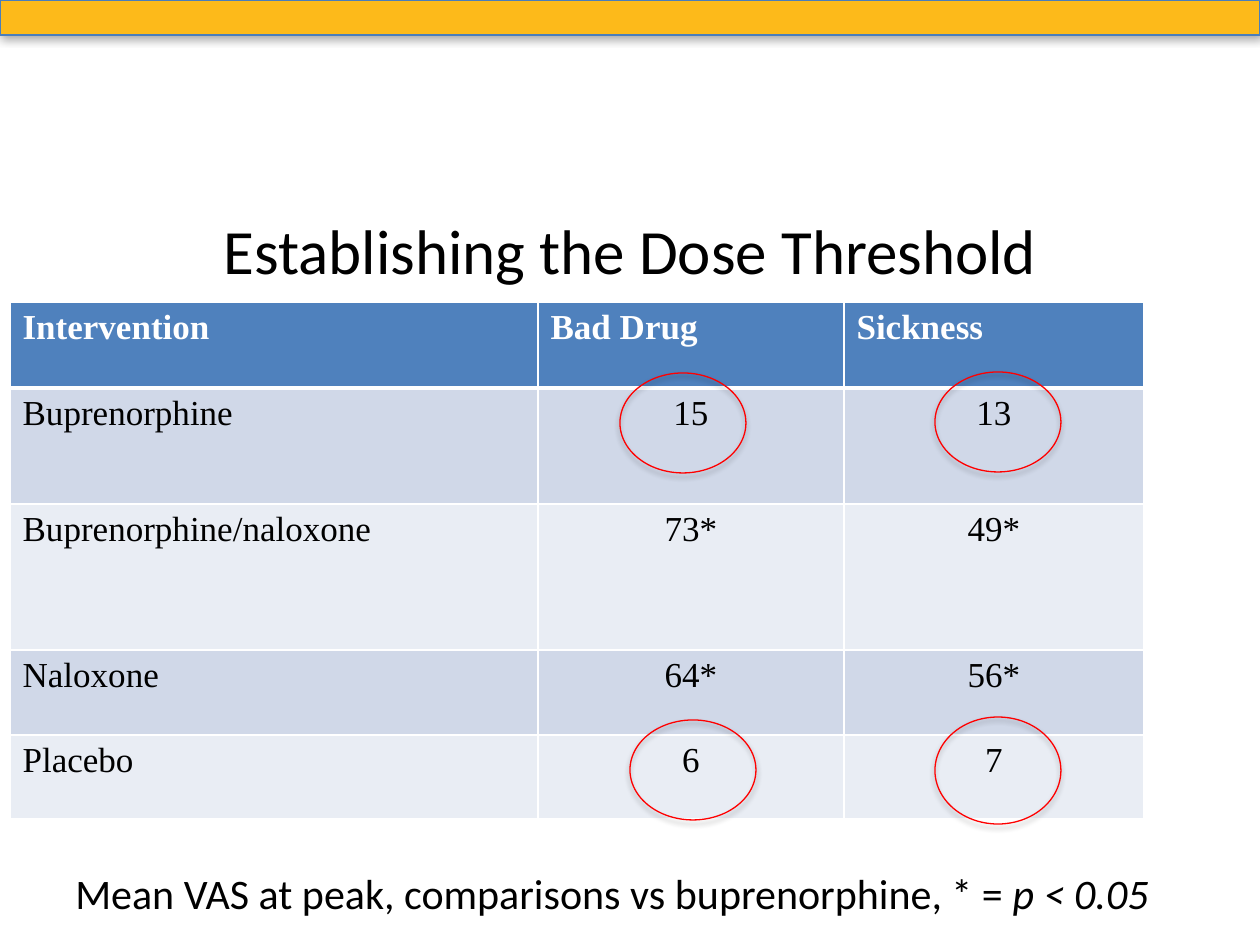
from lxml.etree import SubElement
from pptx import Presentation
from pptx.dml.color import RGBColor
from pptx.enum.shapes import MSO_SHAPE as SHAPE
from pptx.enum.text import MSO_ANCHOR as ANCHOR, PP_ALIGN as ALIGN
from pptx.oxml.ns import qn
from pptx.util import Emu, Pt

PX_PER_INCH = 126
COLUMNS = [528, 306, 300]
ROWS = [
    (86, "4F81BD", ["Intervention", "Bad Drug", "Sickness"]),
    (116, "D0D8E8", ["Buprenorphine", "15", "13"]),
    (146, "E9EDF4", ["Buprenorphine/naloxone", "73*", "49*"]),
    (85, "D0D8E8", ["Naloxone", "64*", "56*"]),
    (84, "E9EDF4", ["Placebo", "6", "7"]),
]
HIGHLIGHTS = [
    (630, 720, 126, 100),
    (935, 717, 126, 107),
    (620, 373, 126, 100),
    (935, 372, 126, 100),
]


def px(n):
    return Emu(round(n * 914400 / PX_PER_INCH))


def rgb(code):
    return RGBColor.from_string(code)


def add_run(p, text, size=24, font="Calibri", color="000000", bold=False, italic=False):
    r = p.add_run()
    r.text = text
    r.font.size = Pt(size)
    r.font.name = font
    r.font.color.rgb = rgb(color)
    r.font.bold = bold
    r.font.italic = italic


def add_text(slide, box, runs, align=ALIGN.LEFT, anchor=ANCHOR.TOP):
    """Add a one-paragraph text box; runs are (text, format) pairs."""
    tf = slide.shapes.add_textbox(*map(px, box)).text_frame
    tf.word_wrap = True
    tf.vertical_anchor = anchor
    p = tf.paragraphs[0]
    p.alignment = align
    for text, style in runs:
        add_run(p, text, **style)


def add_shadow(sp, blur):
    """Give the shape a soft shadow straight below it."""
    sp.shadow.inherit = False
    effects = sp._element.spPr.find(qn("a:effectLst"))
    shadow = SubElement(effects, qn("a:outerShdw"), blurRad=str(Pt(blur)),
                        dist=str(Pt(1.8)), dir="5400000", rotWithShape="0")
    color = SubElement(shadow, qn("a:srgbClr"), val="000000")
    SubElement(color, qn("a:alpha"), val="35000")


def add_shape(slide, kind, box, line, blur, fill=None):
    sp = slide.shapes.add_shape(kind, *map(px, box))
    if fill:
        sp.fill.solid()
        sp.fill.fore_color.rgb = rgb(fill)
    else:
        sp.fill.background()
    sp.line.color.rgb = rgb(line)
    sp.line.width = Pt(0.75)
    add_shadow(sp, blur)


def set_borders(cell, **widths):
    """Draw white borders; widths in points for L, R, T and B."""
    tcPr = cell._tc.get_or_add_tcPr()
    for side, width in widths.items():
        ln = SubElement(tcPr, qn(f"a:ln{side}"), w=str(Pt(width)))
        SubElement(SubElement(ln, qn("a:solidFill")), qn("a:srgbClr"), val="FFFFFF")


def add_results_table(slide, left, top):
    height = sum(row[0] for row in ROWS)
    table = slide.shapes.add_table(len(ROWS), len(COLUMNS), px(left), px(top),
                                   px(sum(COLUMNS)), px(height)).table
    for column, width in zip(table.columns, COLUMNS):
        column.width = px(width)
    for i, (row_height, fill, texts) in enumerate(ROWS):
        table.rows[i].height = px(row_height)
        header = i == 0
        for j, text in enumerate(texts):
            cell = table.cell(i, j)
            set_borders(cell, L=1, R=1, T=3 if i == 1 else 1, B=3 if header else 1)
            cell.fill.solid()
            cell.fill.fore_color.rgb = rgb(fill)
            p = cell.text_frame.paragraphs[0]
            p.alignment = ALIGN.LEFT if header or j == 0 else ALIGN.CENTER
            add_run(p, text, size=20, font="Times New Roman", bold=header,
                    color="FFFFFF" if header else "000000")


def main():
    prs = Presentation()
    prs.slide_width, prs.slide_height = px(1260), px(945)
    slide = prs.slides.add_slide(prs.slide_layouts[6])

    add_shape(slide, SHAPE.RECTANGLE, (0, 0, 1260, 35), "4A7EBB", 5, fill="FDBA1A")
    add_results_table(slide, 10, 302)
    add_text(slide, (63, 179, 1134, 140),
             [("Establishing the Dose Threshold", {"size": 36})],
             align=ALIGN.CENTER, anchor=ANCHOR.MIDDLE)
    add_text(slide, (63, 861, 1134, 63),
             [("Mean VAS at peak, comparisons vs buprenorphine, * = ", {}),
              ("p < 0.05", {"italic": True})])
    for box in HIGHLIGHTS:
        add_shape(slide, SHAPE.OVAL, box, "FF0000", 3.1)

    prs.save("out.pptx")


if __name__ == "__main__":
    main()
